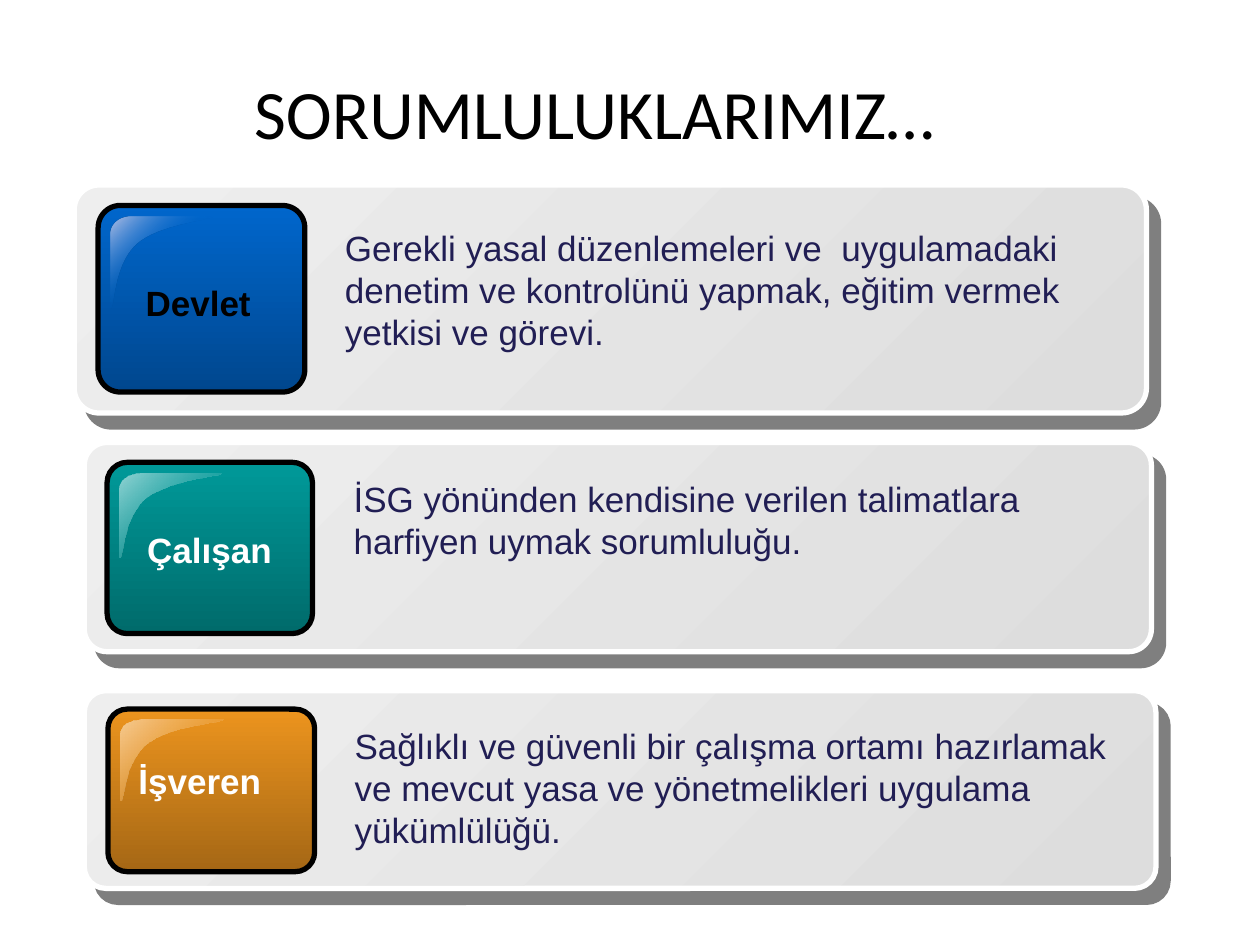
import pptx
import pptx.dml.color
import pptx.enum.shapes
import pptx.enum.text
import pptx.oxml
import pptx.oxml.ns
import pptx.util

Pt = pptx.util.Pt
ROUNDED = pptx.enum.shapes.MSO_SHAPE.ROUNDED_RECTANGLE
NAMESPACE = pptx.oxml.ns.nsdecls("a")


def fill_gradient(shape, stops, angle):
    """Fill with (position %, colour, opacity %) stops; the angle runs clockwise."""
    shape.shadow.inherit = False
    stop_xml = "".join(
        f'<a:gs pos="{position * 1000}"><a:srgbClr val="{color}">'
        f'<a:alpha val="{opacity * 1000}"/></a:srgbClr></a:gs>'
        for position, color, opacity in stops
    )
    gradient = pptx.oxml.parse_xml(
        f'<a:gradFill {NAMESPACE} rotWithShape="1"><a:gsLst>{stop_xml}</a:gsLst>'
        f'<a:lin ang="{angle * 60000}" scaled="1"/></a:gradFill>'
    )
    geometry_index = 1
    shape._element.spPr.insert(geometry_index + 1, gradient)


def add_text(shapes, box, text, size, color, font="Arial", bold=False, wrap=True):
    text_box = shapes.add_textbox(*[Pt(length) for length in box])
    text_frame = text_box.text_frame
    text_frame.word_wrap = wrap
    text_frame.text = text
    run_font = text_frame.paragraphs[0].runs[0].font
    run_font.name = font
    run_font.size = Pt(size)
    run_font.bold = bold
    run_font.color.rgb = pptx.dml.color.RGBColor.from_string(color)
    return text_frame


presentation = pptx.Presentation()
presentation.slide_width = Pt(720)
presentation.slide_height = Pt(540)
slide = presentation.slides.add_slide(presentation.slide_layouts[6])

title = add_text(slide.shapes, (48.2, 37.4, 592, 52.6), "SORUMLULUKLARIMIZ… ", 39.6,
                 "000000", "Calibri")
title.vertical_anchor = pptx.enum.text.MSO_ANCHOR.MIDDLE
title.paragraphs[0].alignment = pptx.enum.text.PP_ALIGN.CENTER

# panel box, badge box, badge colours, gloss stops,
# label, label box, label colour, description, description box
rows = [
    ((42.4, 105.7, 612.7, 130.3), (56.1, 117.4, 118.1, 106.6), ("0066CC", "00478E"),
     [(0, "B5C0E5", 100), (50, "0066CC", 0), (100, "B5C0E5", 100)],
     "Devlet", (76.1, 157.3, 75, 31), "000000",
     "Gerekli yasal düzenlemeleri ve  uygulamadaki denetim ve kontrolünü yapmak, "
     "eğitim vermek yetkisi ve görevi.", (190, 126, 450, 103)),
    ((48.2, 252.9, 609.8, 119.5), (61.2, 264.2, 117.4, 97.9), ("009999", "006B6B"),
     [(0, "93D4D4", 100), (100, "009999", 0)],
     "Çalışan", (77, 298.6, 85.7, 31), "FFFFFF",
     "İSG yönünden kendisine verilen talimatlara harfiyen uymak sorumluluğu.",
     (195, 269.3, 448, 79.2)),
    ((48.2, 394.7, 612.4, 113), (61.7, 405.2, 118.1, 92.9), ("EC941E", "A56715"),
     [(0, "F6CB92", 100), (100, "EC941E", 0)],
     "İşveren", (72, 430.6, 94.3, 31), "FFFFFF",
     "Sağlıklı ve güvenli bir çalışma ortamı hazırlamak ve mevcut yasa ve "
     "yönetmelikleri uygulama yükümlülüğü.", (195.5, 410.2, 450, 79.2)),
]

# Gloss outline in fractions of its size: corners, and the controls of its curved sides
gloss_corners = [(0.2, 0), (0, 0.19), (0, 0.99), (0.27, 0.28), (0.99, 0)]
gloss_controls = {
    0: [(0.09, 0), (0, 0.08)],
    2: [(0.05, 1), (0.02, 0.51)],
    3: [(0.51, 0.07), (1, 0.04)],
}

for (panel_box, badge_box, badge_colors, gloss_stops, label, label_box, label_color,
     description, description_box) in rows:
    shapes = slide.shapes.add_group_shape().shapes

    for box, colors, angle, rounding, line_color in (
        (panel_box, ("EEEEEE", "DDDDDD"), 45, 0.109, "FFFFFF"),
        (badge_box, badge_colors, 90, 0.119, "000000"),
    ):
        shape = shapes.add_shape(ROUNDED, *[Pt(length) for length in box])
        shape.adjustments[0] = rounding
        shape.line.color.rgb = pptx.dml.color.RGBColor.from_string(line_color)
        shape.line.width = Pt(3)
        fill_gradient(shape, [(0, colors[0], 100), (100, colors[1], 100)], angle)
        if box == panel_box:
            effects = shape._element.spPr.find(pptx.oxml.ns.qn("a:effectLst"))
            effects.append(pptx.oxml.parse_xml(
                f'<a:outerShdw {NAMESPACE} dist="{Pt(10.6)}" dir="{49 * 60000}" algn="ctr" '
                'rotWithShape="0"><a:srgbClr val="000000"><a:alpha val="50000"/>'
                "</a:srgbClr></a:outerShdw>"
            ))

    badge_left, badge_top, badge_width, badge_height = badge_box
    gloss_left, gloss_top = badge_left + 7.4, badge_top + 6.2
    gloss_width, gloss_height = badge_width / 2, badge_height / 2
    corners = [(Pt(gloss_left + x * gloss_width), Pt(gloss_top + y * gloss_height))
               for x, y in gloss_corners]
    builder = shapes.build_freeform(*corners[0])
    builder.add_line_segments(corners[1:], close=True)
    gloss = builder.convert_to_shape()
    segments = list(gloss._element.iter(pptx.oxml.ns.qn("a:lnTo")))
    for index, controls in gloss_controls.items():
        segment = segments[index]
        curve = pptx.oxml.parse_xml(f"<a:cubicBezTo {NAMESPACE}>" + "".join(
            f'<a:pt x="{Pt(x * gloss_width)}" y="{Pt(y * gloss_height)}"/>' for x, y in controls
        ) + "</a:cubicBezTo>")
        curve.append(segment[0])
        segment.getparent().replace(segment, curve)
    gloss.line.fill.background()
    fill_gradient(gloss, gloss_stops, 45)

    add_text(shapes, label_box, label, 20, label_color, bold=True, wrap=label == "İşveren")
    add_text(shapes, description_box, description, 20, "211E54")

presentation.save("out.pptx")
